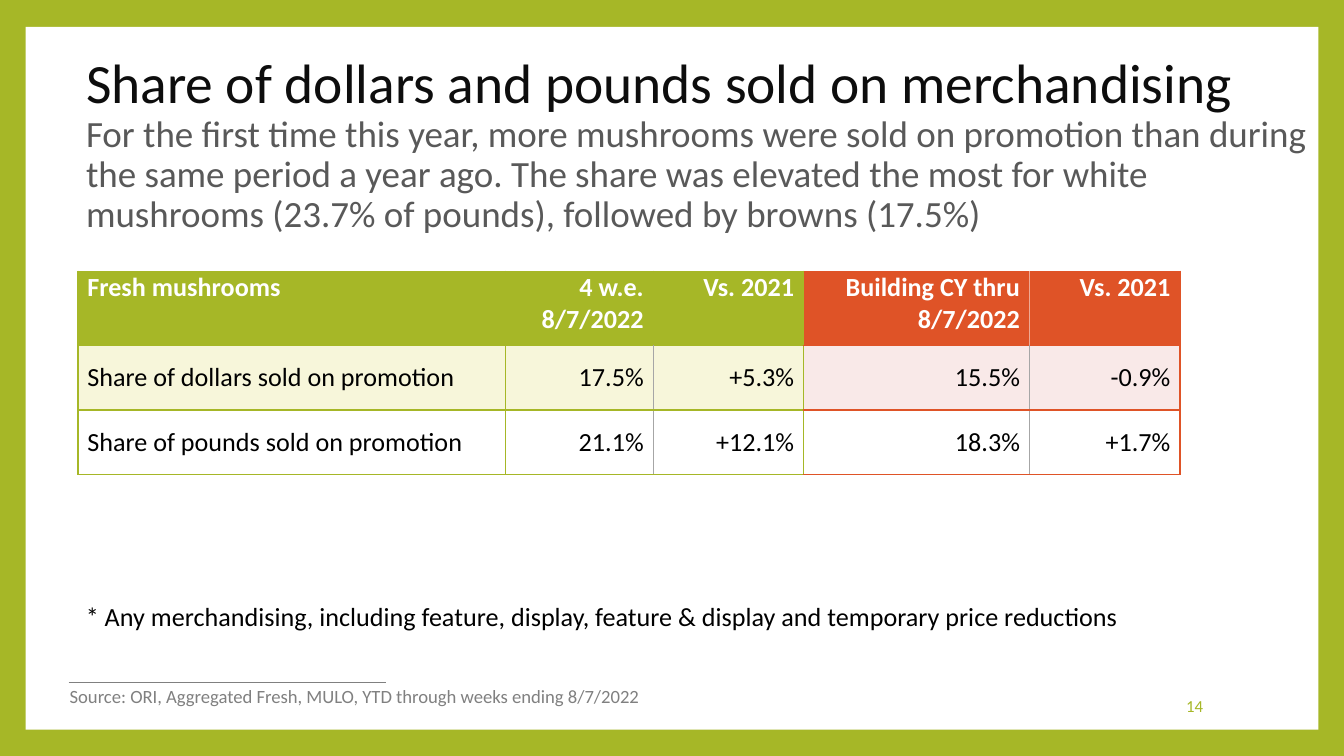
from lxml import etree
from pptx import Presentation
from pptx.dml.color import RGBColor
from pptx.enum.shapes import MSO_CONNECTOR, MSO_SHAPE
from pptx.enum.text import MSO_ANCHOR, MSO_AUTO_SIZE, PP_ALIGN
from pptx.oxml.ns import qn
from pptx.util import Inches, Pt

LEFT, RIGHT = PP_ALIGN.LEFT, PP_ALIGN.RIGHT
TOP, MIDDLE = MSO_ANCHOR.TOP, MSO_ANCHOR.MIDDLE
FONT = "Calibri"
SLIDE_WIDTH = 10
SLIDE_HEIGHT = SLIDE_WIDTH * 9 / 16
COLORS = {
    "green": "A6B727", "orange": "DF5327", "pale_green": "F7F6DA",
    "pale_orange": "F9E9E8", "white": "FFFFFF", "black": "000000",
    "ink": "0D0D0D", "dark_gray": "595959", "gray": "808080",
    "hairline": "A6A6A6", "light_orange": "EFA993",
}

TITLE = "Share of dollars and pounds sold on merchandising"
SUBTITLE = ("For the first time this year, more mushrooms were sold on promotion "
            "than during the same period a year ago. The share was elevated the most "
            "for white mushrooms (23.7% of pounds), followed by browns (17.5%)")
# text, box, size, color, alignment, anchor, wrap
NOTES = [
    ("14", (7.65, 5.1, 1.4, 0.3), 9, "green", RIGHT, MIDDLE, True),
    ("Source: ORI, Aggregated Fresh, MULO, YTD through weeks ending 8/7/2022",
     (0.42, 5.05, 4.52, 0.27), 10, "gray", LEFT, TOP, False),
    ("* Any merchandising, including feature, display, feature & display "
     "and temporary price reductions",
     (0.54, 4.42, 8.1, 0.34), 14, "black", LEFT, TOP, False),
]
TABLE = [
    ["Fresh mushrooms", "4 w.e. 8/7/2022", "Vs. 2021", "Building CY thru 8/7/2022", "Vs. 2021"],
    ["Share of dollars sold on promotion", "17.5%", "+5.3%", "15.5%", "-0.9%"],
    ["Share of pounds sold on promotion", "21.1%", "+12.1%", "18.3%", "+1.7%"],
]
COL_WIDTHS = [3.18, 1.1, 1.12, 1.68, 1.12]
ROW_HEIGHTS = [0.55, 0.48, 0.48]
FIRST_YTD_COL = 3
GREEN_FILLS = ["green", "pale_green", "white"]
ORANGE_FILLS = ["orange", "pale_orange", "white"]


def rgb(name):
    return RGBColor.from_string(COLORS[name])


def style_font(font, size, color, bold=False):
    font.name, font.size, font.bold = FONT, Pt(size), bold
    font.color.rgb = rgb(color)


def add_text(s, text, box, size, color, align, anchor, wrap):
    tf = s.shapes.add_textbox(*map(Inches, box)).text_frame
    tf.word_wrap = wrap
    tf.vertical_anchor = anchor
    if not wrap:
        tf.auto_size = MSO_AUTO_SIZE.SHAPE_TO_FIT_TEXT
    p = tf.paragraphs[0]
    p.text, p.alignment = text, align
    style_font(p.font, size, color)


def set_borders(cell, borders):
    """Add left, right, top and bottom lines, in schema order, before the fill."""
    tcPr = cell._tc.get_or_add_tcPr()
    for i, side in enumerate("LRTB"):
        color, width = borders[side]
        ln = etree.Element(qn(f"a:ln{side}"), w=str(Pt(width)))
        fill = etree.SubElement(ln, qn("a:solidFill"))
        etree.SubElement(fill, qn("a:srgbClr"), val=COLORS[color])
        tcPr.insert(i, ln)


def inner_line(row, ytd):
    """Line between a share column and its change column."""
    if row:
        return "hairline", 0.5
    return ("light_orange" if ytd else "green"), 0.5


def add_share_table(s):
    table = s.shapes.add_table(
        len(TABLE), len(COL_WIDTHS), Inches(0.58), Inches(2.02),
        Inches(sum(COL_WIDTHS)), Inches(sum(ROW_HEIGHTS))).table
    for col, width in zip(table.columns, COL_WIDTHS):
        col.width = Inches(width)
    for row, height in zip(table.rows, ROW_HEIGHTS):
        row.height = Inches(height)
    last = len(COL_WIDTHS) - 1
    for r, values in enumerate(TABLE):
        for c, value in enumerate(values):
            ytd = c >= FIRST_YTD_COL
            cell = table.cell(r, c)
            cell.margin_left = cell.margin_right = Inches(0.07)
            cell.margin_top = cell.margin_bottom = 0
            cell.vertical_anchor = MIDDLE if r else TOP
            cell.fill.solid()
            cell.fill.fore_color.rgb = rgb((ORANGE_FILLS if ytd else GREEN_FILLS)[r])
            p = cell.text_frame.paragraphs[0]
            p.text, p.alignment = value, RIGHT if c else LEFT
            style_font(p.font, 14, "black" if r else "white", bold=r == 0)
            edge = ("orange" if ytd else "green", 1)
            inner = inner_line(r, ytd)
            set_borders(cell, {
                "L": inner if c in (2, last) else ("green", 1),
                "R": inner if c in (1, FIRST_YTD_COL) else ("orange" if c == last else "green", 1),
                "T": edge, "B": edge})


prs = Presentation()
prs.slide_width, prs.slide_height = Inches(SLIDE_WIDTH), Inches(SLIDE_HEIGHT)
s = prs.slides.add_slide(prs.slide_layouts[5])
s.background.fill.solid()
s.background.fill.fore_color.rgb = rgb("green")

title = s.shapes.title
panel = s.shapes.add_shape(MSO_SHAPE.RECTANGLE, *map(Inches, (0.19, 0.2, 9.62, 5.23)))
panel.shadow.inherit = False
panel.fill.solid()
panel.fill.fore_color.rgb = rgb("white")
panel.line.fill.background()
title._element.addprevious(panel._element)

rule = s.shapes.add_connector(MSO_CONNECTOR.STRAIGHT, *map(Inches, (0.51, 5.08, 2.87, 5.08)))
rule.line.color.rgb = rgb("gray")
rule.line.width = Pt(0.79)
etree.SubElement(rule._element.spPr, qn("a:effectLst"))

title.left, title.top, title.width, title.height = map(Inches, (0.54, 0.54, 9.29, 1.09))
tf = title.text_frame
tf.word_wrap, tf.auto_size, tf.vertical_anchor = True, MSO_AUTO_SIZE.NONE, MIDDLE
p = tf.paragraphs[0]
p.alignment, p.line_spacing = LEFT, 0.9
heading = p.add_run()
heading.text = TITLE
style_font(heading.font, 29.7, "ink")
p.add_line_break()
subheading = p.add_run()
subheading.text = SUBTITLE
style_font(subheading.font, 19.8, "dark_gray")

for note in NOTES:
    add_text(s, *note)
add_share_table(s)

prs.save("out.pptx")
